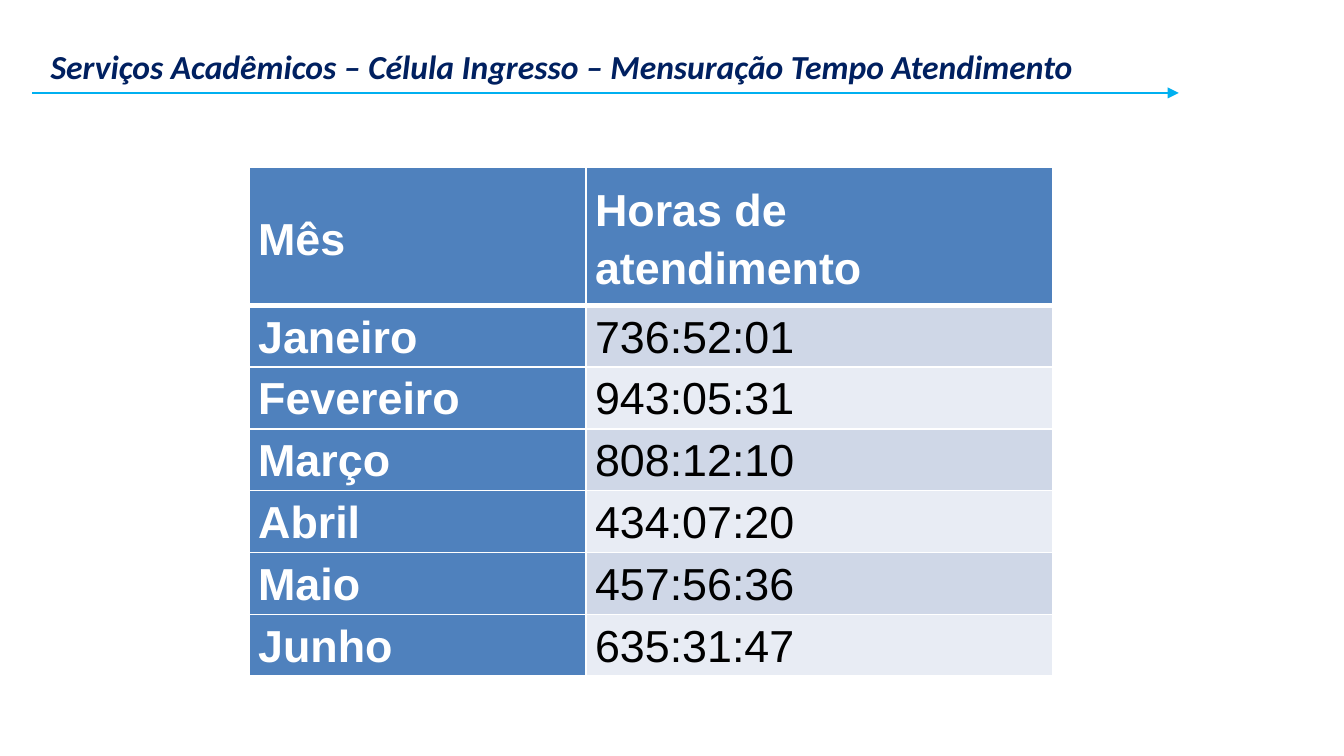
"""Build the slide with the monthly service hours of the admissions team."""
import pptx
import pptx.dml.color
import pptx.enum.shapes
import pptx.enum.text
import pptx.oxml
import pptx.oxml.ns
import pptx.util

Pt = pptx.util.Pt
RGBColor = pptx.dml.color.RGBColor
Align = pptx.enum.text.PP_ALIGN
Anchor = pptx.enum.text.MSO_ANCHOR

NAVY = RGBColor(0x00, 0x20, 0x60)
CYAN = RGBColor(0x00, 0xB0, 0xF0)
BLUE = RGBColor(0x4F, 0x81, 0xBD)
BAND_DARK = RGBColor(0xCF, 0xD7, 0xE7)
BAND_LIGHT = RGBColor(0xE8, 0xEC, 0xF4)
WHITE = RGBColor(0xFF, 0xFF, 0xFF)
BLACK = RGBColor(0x00, 0x00, 0x00)

HEADINGS = ("Mês", "Horas de atendimento")
HOURS = (
    ("Janeiro", "736:52:01"),
    ("Fevereiro", "943:05:31"),
    ("Março", "808:12:10"),
    ("Abril", "434:07:20"),
    ("Maio", "457:56:36"),
    ("Junho", "635:31:47"),
)


class HoursSlide:
    """Hold the slide and the style of its title, arrow and table."""

    title_font, title_size = "Calibri", 18
    table_font, table_size = "Arial", 24
    line_spacing = 1.15
    cell_margin = 5

    def __init__(self, deck):
        """Add a blank slide to the deck."""
        self.slide = deck.slides.add_slide(deck.slide_layouts[6])

    def style(self, paragraph, font, size, color, bold, italic=False):
        """Format every run of a paragraph."""
        for run in paragraph.runs:
            run.font.name = font
            run.font.size = Pt(size)
            run.font.color.rgb = color
            run.font.bold = bold
            run.font.italic = italic

    def title(self, text, left, top, width, height):
        """Add the slide title."""
        frame = self.slide.shapes.add_textbox(Pt(left), Pt(top), Pt(width), Pt(height)).text_frame
        frame.word_wrap = True
        frame.text = text
        self.style(frame.paragraphs[0], self.title_font, self.title_size, NAVY, True, True)

    def arrow(self, left, right, y):
        """Add a horizontal arrow pointing right."""
        rule = self.slide.shapes.add_connector(
            pptx.enum.shapes.MSO_CONNECTOR.STRAIGHT, Pt(left), Pt(y), Pt(right), Pt(y))
        rule.line.color.rgb = CYAN
        rule.line.width = Pt(1)
        head = pptx.oxml.parse_xml(f'<a:tailEnd {pptx.oxml.ns.nsdecls("a")} type="triangle"/>')
        rule.line._get_or_add_ln().append(head)
        rule._element.spPr.append(
            pptx.oxml.parse_xml(f'<a:effectLst {pptx.oxml.ns.nsdecls("a")}/>'))

    def borders(self, cell, widths):
        """Draw white borders of the given widths around a cell."""
        for side, width in widths.items():
            cell._tc.get_or_add_tcPr().append(pptx.oxml.parse_xml(
                f'<a:ln{side} {pptx.oxml.ns.nsdecls("a")} w="{Pt(width)}">'
                f'<a:solidFill><a:srgbClr val="{WHITE}"/></a:solidFill></a:ln{side}>'))

    def cell(self, cell, text, fill, color, bold, align, widths):
        """Fill in one table cell."""
        self.borders(cell, widths)
        cell.fill.solid()
        cell.fill.fore_color.rgb = fill
        cell.margin_left = cell.margin_right = Pt(self.cell_margin)
        cell.margin_top = cell.margin_bottom = 0
        cell.text_frame.text = text
        paragraph = cell.text_frame.paragraphs[0]
        paragraph.alignment = align
        paragraph.line_spacing = self.line_spacing
        self.style(paragraph, self.table_font, self.table_size, color, bold)

    def table(self, left, top, height, column_widths, header_height, row_height):
        """Add the table of hours by month."""
        holder = self.slide.shapes.add_table(
            len(HOURS) + 1, len(HEADINGS), Pt(left), Pt(top),
            Pt(sum(column_widths)), Pt(height))
        grid = holder.table
        grid.first_row = grid.horz_banding = False
        for column, width in zip(grid.columns, column_widths):
            column.width = Pt(width)
        for index, row in enumerate(grid.rows):
            row.height = Pt(row_height if index else header_height)
        holder.height = Pt(height)

        header_borders = {"L": 1, "R": 1, "T": 1, "B": 3}
        for index, (heading, align) in enumerate(zip(HEADINGS, (Align.JUSTIFY, Align.LEFT))):
            header = grid.cell(0, index)
            self.cell(header, heading, BLUE, WHITE, True, align, header_borders)
            header.vertical_anchor = Anchor.MIDDLE
        for index, (month, hours) in enumerate(HOURS, start=1):
            band = BAND_DARK if index % 2 else BAND_LIGHT
            row_borders = {"L": 1, "R": 1, "T": 3 if index == 1 else 1, "B": 1}
            self.cell(grid.cell(index, 0), month, BLUE, WHITE, True, Align.JUSTIFY, row_borders)
            self.cell(grid.cell(index, 1), hours, band, BLACK, False, Align.JUSTIFY, row_borders)


def main():
    """Build and save the deck."""
    deck = pptx.Presentation()
    deck.slide_width, deck.slide_height = Pt(720), Pt(405)
    page = HoursSlide(deck)
    page.title("Serviços Acadêmicos – Célula Ingresso – Mensuração Tempo Atendimento",
               20, 21, 625, 31.5)
    page.arrow(17.3, 631.5, 49.8)
    page.table(133.3, 89.5, 273, (180.5, 250), 74, 23)
    deck.save("out.pptx")


if __name__ == "__main__":
    main()
